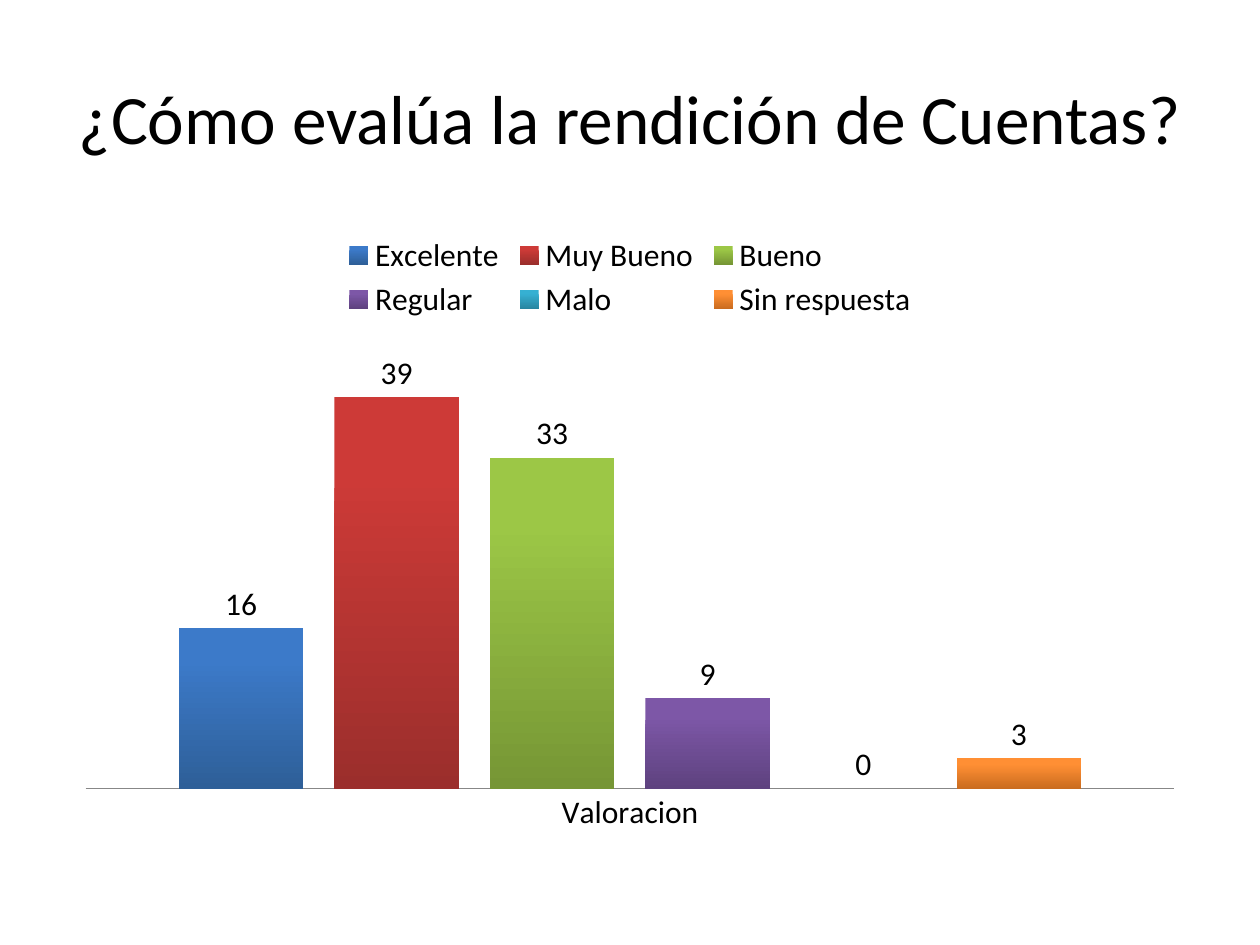
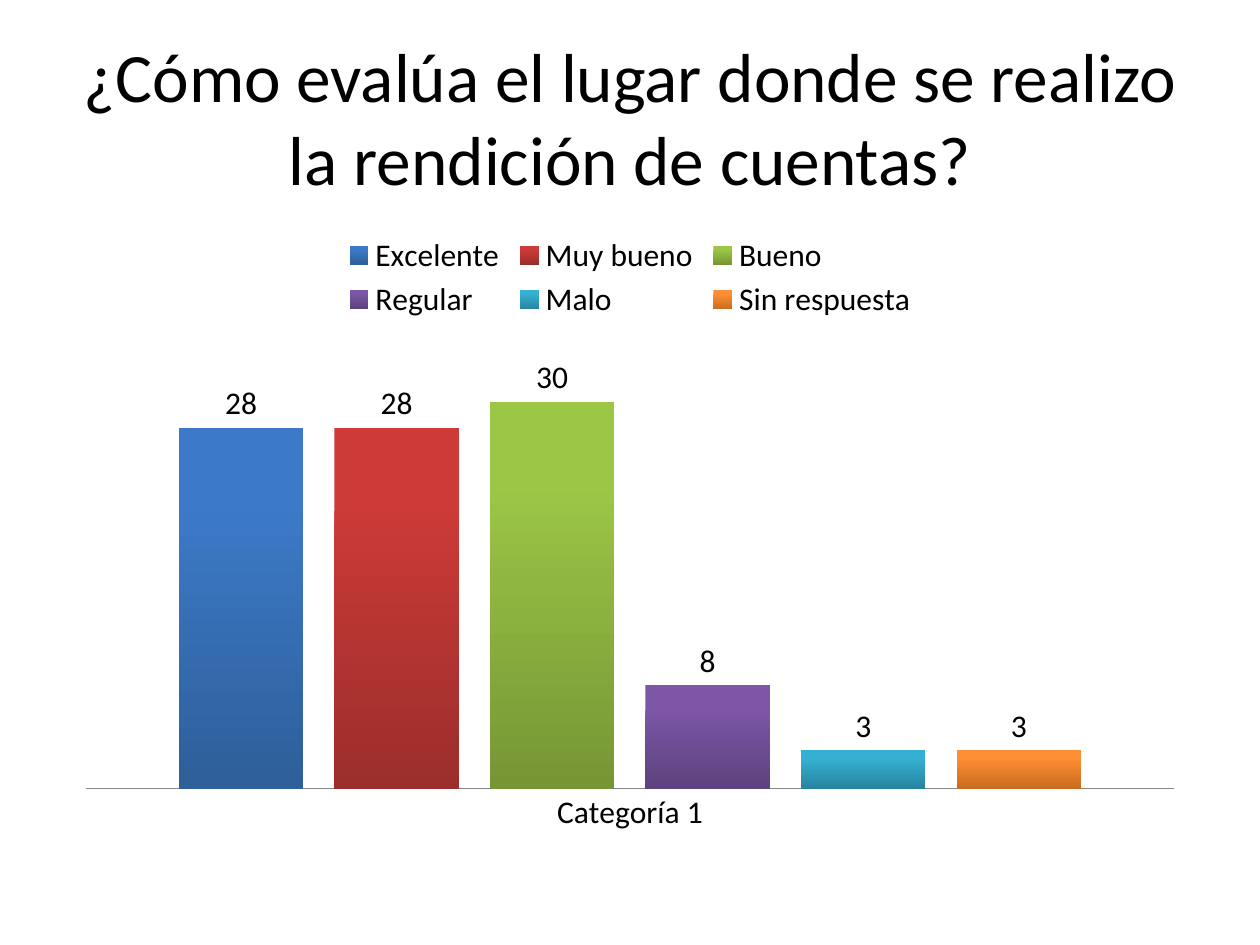
from pptx import Presentation
from pptx.chart.data import CategoryChartData
from pptx.dml.color import RGBColor
from pptx.enum import chart as ch, text
from pptx.util import Inches, Pt

FONT = "Calibri"
BLACK = "000000"
AXIS_GREY = "878787"
# Top and bottom colour of each rating's column
RATING_SHADES = [
    ("3C7AC9", "2E5F98"), ("CD3A37", "9B2E2C"), ("9CC746", "769635"),
    ("7D57A7", "5E427F"), ("36B0D2", "2885A0"), ("FF8F34", "CA6C1F"),
]

# Title, category, highest axis value, ratings with their votes
QUESTIONS = [
    ("¿Cómo evalúa la rendición de Cuentas?", "Valoracion", 45,
     {"Excelente": 16, "Muy Bueno": 39, "Bueno": 33,
      "Regular": 9, "Malo": 0, "Sin respuesta": 3}),
    ("¿Cómo evalúa el lugar donde se realizo la rendición de cuentas?",
     "Categoría 1", 35,
     {"Excelente": 28, "Muy bueno": 28, "Bueno": 30,
      "Regular": 8, "Malo": 3, "Sin respuesta": 3}),
]


def color(hex_code):
    return RGBColor.from_string(hex_code)


def style_font(font, size):
    font.name = FONT
    font.size = Pt(size)
    font.color.rgb = color(BLACK)


prs = Presentation()
prs.slide_width, prs.slide_height = Inches(10), Inches(7.5)

for question, category, axis_top, votes in QUESTIONS:
    slide = prs.slides.add_slide(prs.slide_layouts[6])

    # Question
    heading = slide.shapes.add_textbox(
        Inches(0.5), Inches(0.3), Inches(9), Inches(1.25)).text_frame
    heading.word_wrap = True
    heading.vertical_anchor = text.MSO_ANCHOR.MIDDLE
    line = heading.paragraphs[0]
    line.text = question
    line.alignment = text.PP_ALIGN.CENTER
    style_font(line.font, 39.6)

    # Answers
    answers = CategoryChartData()
    answers.categories = [category]
    for rating, count in votes.items():
        answers.add_series(rating, [count])
    chart = slide.shapes.add_chart(
        ch.XL_CHART_TYPE.COLUMN_CLUSTERED,
        Inches(0.5), Inches(1.75), Inches(9), Inches(4.95), answers).chart
    style_font(chart.font, 18)
    chart.has_title = False
    chart.has_legend = True
    chart.legend.position = ch.XL_LEGEND_POSITION.TOP
    chart.legend.include_in_layout = False

    # Axes
    chart.value_axis.visible = False
    chart.value_axis.has_major_gridlines = False
    chart.value_axis.minimum_scale = 0
    chart.value_axis.maximum_scale = axis_top
    chart.category_axis.major_tick_mark = ch.XL_TICK_MARK.NONE
    chart.category_axis.format.line.color.rgb = color(AXIS_GREY)
    chart.category_axis.format.line.width = Pt(0.75)

    # Columns, shaded from top to bottom
    plot = chart.plots[0]
    plot.gap_width = 150
    plot.overlap = -25
    plot.vary_by_categories = False
    for ratings, shades in zip(plot.series, RATING_SHADES):
        fill = ratings.format.fill
        fill.gradient()
        fill.gradient_angle = 270
        for stop, shade, position in zip(fill.gradient_stops, shades, (0.2, 1)):
            stop.color.rgb = color(shade)
            stop.position = position
        ratings.invert_if_negative = False
        labels = ratings.data_labels
        labels.show_value = True
        labels.position = ch.XL_LABEL_POSITION.OUTSIDE_END
        style_font(labels.font, 18)

prs.save("out.pptx")
